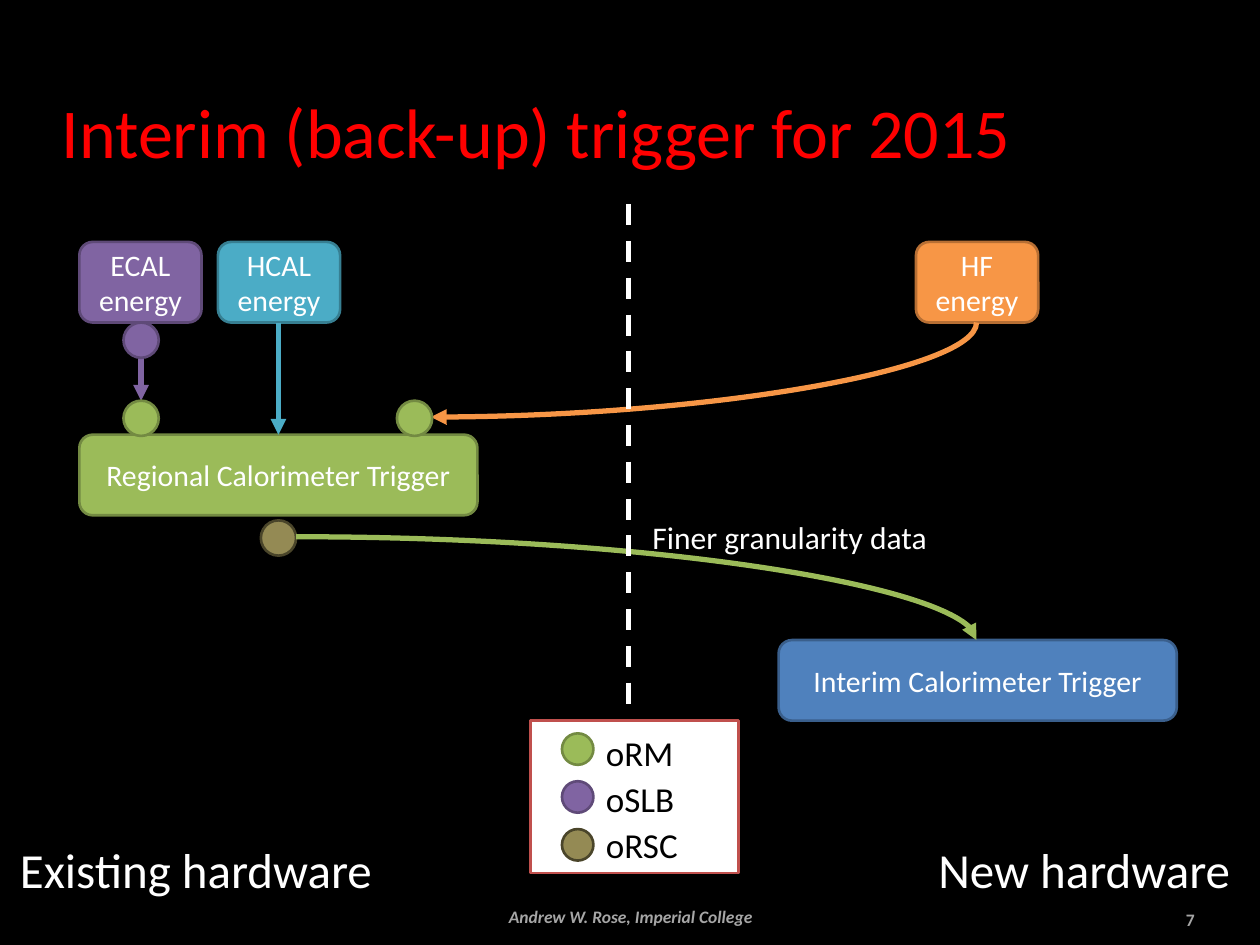
from pptx import Presentation
from pptx.dml.color import RGBColor
from pptx.enum.dml import MSO_LINE
from pptx.enum.shapes import MSO_CONNECTOR, MSO_SHAPE
from pptx.enum.text import MSO_ANCHOR, MSO_AUTO_SIZE, PP_ALIGN
from pptx.oxml.ns import qn
from pptx.util import Inches, Pt
from lxml.etree import SubElement

BLACK = RGBColor(0x00, 0x00, 0x00)
WHITE = RGBColor(0xFF, 0xFF, 0xFF)
GREY = RGBColor(0xA6, 0xA6, 0xA6)
RED = RGBColor(0xFF, 0x00, 0x00)
BRICK = RGBColor(0xC0, 0x50, 0x4D)
PURPLE = RGBColor(0x80, 0x64, 0xA2)
TEAL = RGBColor(0x4B, 0xAC, 0xC6)
ORANGE = RGBColor(0xF7, 0x96, 0x46)
GREEN = RGBColor(0x9B, 0xBB, 0x59)
BLUE = RGBColor(0x4F, 0x81, 0xBD)
OLIVE = RGBColor(0x94, 0x8A, 0x54)
OUTLINES = {
    PURPLE: RGBColor(0x5F, 0x4A, 0x78),
    TEAL: RGBColor(0x37, 0x7F, 0x92),
    ORANGE: RGBColor(0xB7, 0x6F, 0x34),
    GREEN: RGBColor(0x73, 0x8A, 0x42),
    BLUE: RGBColor(0x3A, 0x5F, 0x8C),
    OLIVE: RGBColor(0x4A, 0x45, 0x2A),
    WHITE: BRICK,
}

TITLE = "Interim (back-up) trigger for 2015"
ENERGY_WIDTH, TRIGGER_WIDTH, BLOCK_HEIGHT = 0.97, 3.16, 0.64
DOT, LEGEND_DOT = 0.28, 0.25
BLOCKS = [
    ("ECAL\nenergy", 0.63, 1.92, ENERGY_WIDTH, PURPLE),
    ("HCAL\nenergy", 1.73, 1.92, ENERGY_WIDTH, TEAL),
    ("HF\nenergy", 7.27, 1.92, ENERGY_WIDTH, ORANGE),
    ("Regional Calorimeter Trigger", 0.63, 3.45, TRIGGER_WIDTH, GREEN),
    ("Interim Calorimeter Trigger", 6.18, 5.08, TRIGGER_WIDTH, BLUE),
]
STRAIGHT_ARROWS = [
    ((1.12, 2.84), (1.12, 3.18), PURPLE),
    ((2.21, 2.56), (2.21, 3.45), TEAL),
]
DOTS = [
    (0.98, 3.18, GREEN),
    (0.98, 2.56, PURPLE),
    (3.15, 3.18, GREEN),
    (2.07, 4.13, OLIVE),
]
LEGEND = [("oRM", GREEN), ("oSLB", PURPLE), ("oRSC", OLIVE)]
LABELS = [
    ("Finer granularity data", 5.08, 4.06, 2.68, 0.4, 18, PP_ALIGN.LEFT),
    ("Existing hardware", 0.06, 6.61, 3.25, 0.57, 28, PP_ALIGN.LEFT),
    ("New hardware", 6.61, 6.61, 3.25, 0.57, 28, PP_ALIGN.RIGHT),
]
FOOTERS = [
    ("7", 8.62, 7.16, 0.96, PP_ALIGN.RIGHT, False),
    ("Andrew W. Rose, Imperial College", 2.77, 7.14, 4.47, PP_ALIGN.CENTER, True),
]


def write(frame, text, size, color, align=PP_ALIGN.LEFT, bold=False, italic=False):
    frame.text = text
    frame.word_wrap = True
    for para in frame.paragraphs:
        para.alignment = align
        for span in para.runs:
            font = span.font
            font.name, font.size, font.bold, font.italic = "Calibri", Pt(size), bold, italic
            font.color.rgb = color


def add_box(page, kind, left, top, width, height, color):
    box = page.shapes.add_shape(kind, *map(Inches, (left, top, width, height)))
    box.shadow.inherit = False
    box.fill.solid()
    box.fill.fore_color.rgb = color
    box.line.color.rgb = OUTLINES[color]
    box.line.width = Pt(1.5)
    return box


def add_label(page, left, top, width, height, *style):
    label = page.shapes.add_textbox(*map(Inches, (left, top, width, height)))
    write(label.text_frame, *style)
    return label.text_frame


def add_line(page, start, end, color, kind=MSO_CONNECTOR.STRAIGHT, arrow=True):
    line = page.shapes.add_connector(kind, *map(Inches, start + end))
    line.line.color.rgb = color
    line.line.width = Pt(3)
    properties = line._element.spPr
    if arrow:
        SubElement(properties.find(qn("a:ln")), qn("a:tailEnd"), type="triangle")
    SubElement(properties, qn("a:effectLst"))
    return line


def add_curve(page, start, end, color, quarter_turn=False):
    if quarter_turn:
        middle_x, middle_y = (start[0] + end[0]) / 2, (start[1] + end[1]) / 2
        half_width, half_height = abs(end[1] - start[1]) / 2, abs(end[0] - start[0]) / 2
        start = (middle_x - half_width, middle_y - half_height)
        end = (middle_x + half_width, middle_y + half_height)
    curve = add_line(page, start, end, color, MSO_CONNECTOR.CURVE)
    properties = curve._element.spPr
    properties.find(qn("a:prstGeom")).set("prst", "curvedConnector2")
    if quarter_turn:
        properties.find(qn("a:xfrm")).set("rot", str(90 * 60000))


def add_legend(page):
    panel = add_box(page, MSO_SHAPE.RECTANGLE, 4.21, 5.72, 1.65, 1.21, WHITE)
    frame = panel.text_frame
    write(frame, "\n".join(name for name, color in LEGEND), 20, BLACK)
    frame.vertical_anchor = MSO_ANCHOR.TOP
    for para in frame.paragraphs:
        para.level = 1
        para.line_spacing = 1.1
        para._p.get_or_add_pPr().set("marL", str(Inches(0.5)))
    for row, (name, color) in enumerate(LEGEND):
        add_box(page, MSO_SHAPE.OVAL, 4.46, 5.82 + 0.38 * row, LEGEND_DOT, LEGEND_DOT, color)


def main():
    deck = Presentation()
    deck.slide_width, deck.slide_height = Inches(10), Inches(7.5)
    page = deck.slides.add_slide(deck.slide_layouts[5])
    page.background.fill.solid()
    page.background.fill.fore_color.rgb = BLACK

    title = page.shapes.title
    title.left, title.top, title.width, title.height = map(Inches, (0.39, 0.25, 8.4, 1.17))
    write(title.text_frame, TITLE, 40, RED)
    title.text_frame.vertical_anchor = MSO_ANCHOR.BOTTOM
    title.text_frame.auto_size = MSO_AUTO_SIZE.NONE
    title.text_frame.paragraphs[0].space_before = Pt(4)

    for text, left, top, width, align, italic in FOOTERS:
        frame = add_label(page, left, top, width, 0.27, text, 10, GREY, align, True, italic)
        frame.vertical_anchor = MSO_ANCHOR.MIDDLE

    add_legend(page)
    for text, left, top, width, color in BLOCKS:
        block = add_box(page, MSO_SHAPE.ROUNDED_RECTANGLE, left, top, width, BLOCK_HEIGHT, color)
        write(block.text_frame, text, 17, WHITE, PP_ALIGN.CENTER)
        block.text_frame.vertical_anchor = MSO_ANCHOR.MIDDLE
    for start, end, color in STRAIGHT_ARROWS:
        add_line(page, start, end, color)
    add_curve(page, (7.75, 2.56), (3.42, 3.31), ORANGE, quarter_turn=True)
    for left, top, color in DOTS:
        add_box(page, MSO_SHAPE.OVAL, left, top, DOT, DOT, color)
    add_curve(page, (2.35, 4.26), (7.75, 5.08), GREEN)

    divider = add_line(page, (4.99, 1.62), (4.99, 5.64), WHITE, arrow=False)
    divider.line.dash_style = MSO_LINE.DASH
    for text, left, top, width, height, size, align in LABELS:
        frame = add_label(page, left, top, width, height, text, size, WHITE, align)
        frame.auto_size = MSO_AUTO_SIZE.SHAPE_TO_FIT_TEXT

    deck.save("out.pptx")


if __name__ == "__main__":
    main()
